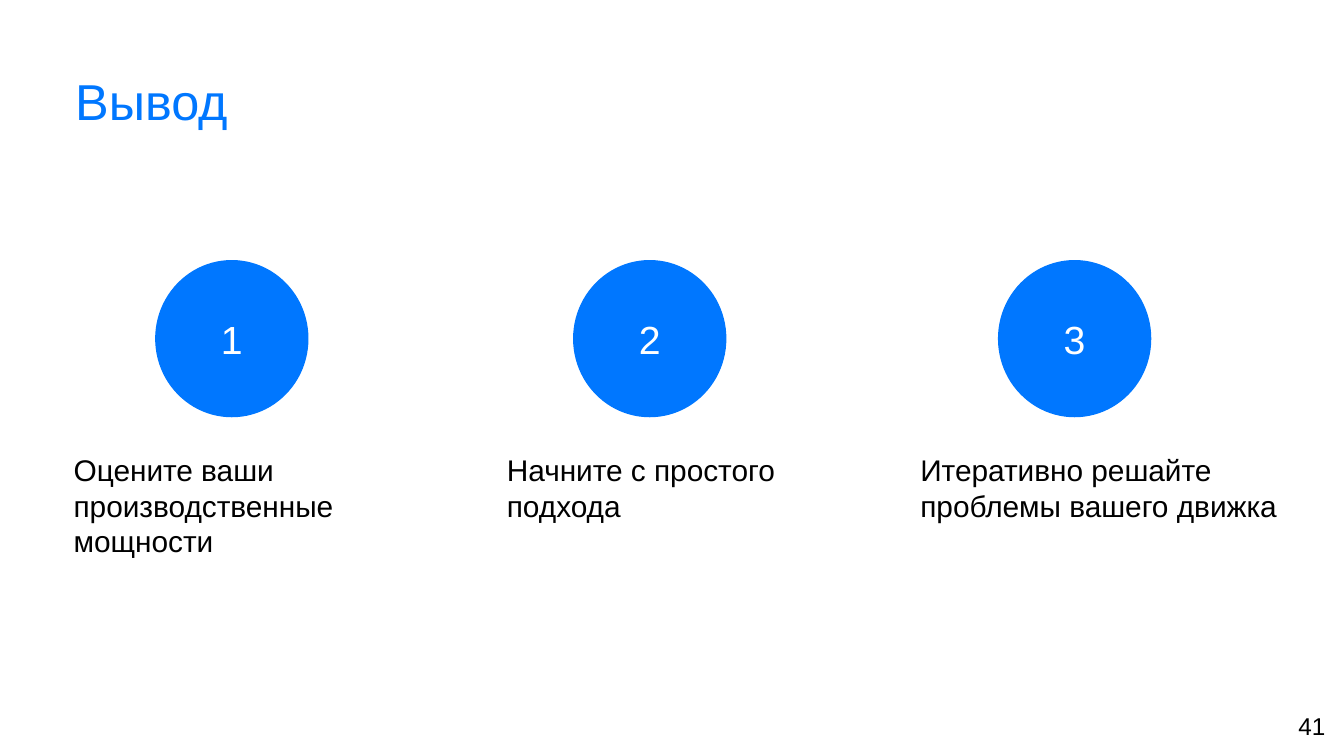
from pptx import Presentation
from pptx.dml.color import RGBColor
from pptx.enum.shapes import MSO_SHAPE
from pptx.enum.text import MSO_ANCHOR, PP_ALIGN
from pptx.util import Pt

BLUE, BLACK, WHITE = "0077FF", "000000", "FFFFFF"
INSET = 7.2

# Number, left of its circle, left of its caption, caption
STEPS = [
    ("1", 83.5, 32.4, "Оцените ваши производственные мощности"),
    ("2", 307.4, 264.5, "Начните с простого подхода"),
    ("3", 535, 486, "Итеративно решайте проблемы вашего движка"),
]


def rgb(value):
    return RGBColor.from_string(value)


def write(s, text, size, color=BLACK, align=PP_ALIGN.LEFT,
          anchor=MSO_ANCHOR.TOP, inset=INSET, spacing=None):
    tf = s.text_frame
    tf.word_wrap = True
    tf.vertical_anchor = anchor
    tf.margin_left = tf.margin_right = Pt(inset)
    tf.margin_top = tf.margin_bottom = Pt(inset)
    p = tf.paragraphs[0]
    p.alignment = align
    p.line_spacing = spacing
    r = p.add_run()
    r.text = text
    r.font.name = "Arial"
    r.font.size = Pt(size)
    r.font.color.rgb = rgb(color)


def add_title(s, text):
    sp = s.shapes.title
    sp.left, sp.top, sp.width, sp.height = Pt(40.3), Pt(41), Pt(640.8), Pt(38.2)
    write(sp, text, 27, color=BLUE, inset=0, spacing=0.9)


def add_label(s, x, y, w, h, text, size, **fmt):
    sp = s.shapes.add_textbox(Pt(x), Pt(y), Pt(w), Pt(h))
    write(sp, text, size, **fmt)


def add_circle(s, x, number):
    sp = s.shapes.add_shape(MSO_SHAPE.OVAL, Pt(x), Pt(139.7), Pt(81.4), Pt(83.5))
    sp.shadow.inherit = False
    sp.fill.solid()
    sp.fill.fore_color.rgb = rgb(BLUE)
    sp.line.color.rgb = rgb(BLUE)
    sp.line.width = Pt(0.75)
    write(sp, number, 21, color=WHITE, align=PP_ALIGN.CENTER,
          anchor=MSO_ANCHOR.MIDDLE)


def main():
    prs = Presentation()
    prs.slide_width, prs.slide_height = Pt(720), Pt(405)
    s = prs.slides.add_slide(prs.slide_layouts[5])

    # Title and slide number
    add_title(s, "Вывод")
    add_label(s, 673.9, 373.7, 43.2, 31, "41", 13, align=PP_ALIGN.RIGHT)

    # Numbered steps with captions
    for number, circle_x, caption_x, caption in STEPS:
        add_circle(s, circle_x, number)
        add_label(s, caption_x, 234.7, 206.6, 48.2, caption, 16)

    prs.save("out.pptx")


if __name__ == "__main__":
    main()
